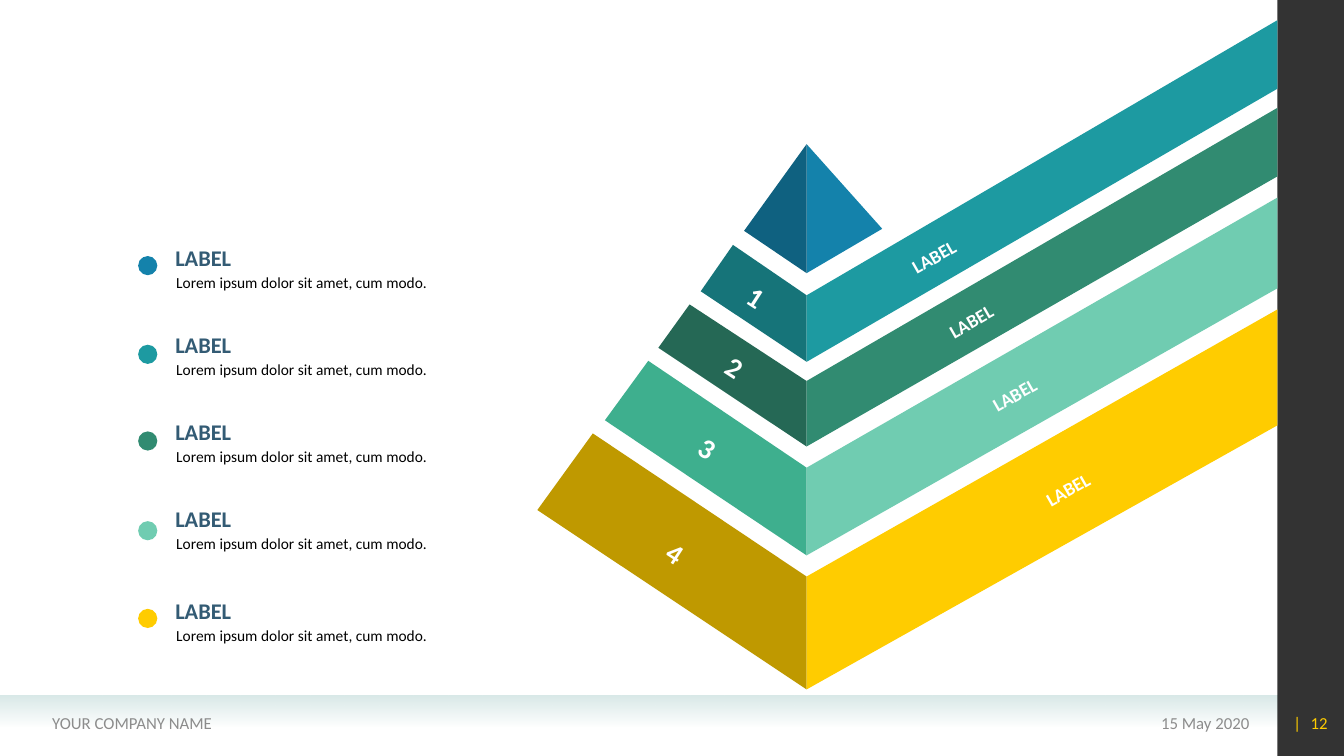
from lxml.etree import SubElement
from pptx import Presentation
from pptx.dml.color import RGBColor
from pptx.enum.shapes import MSO_SHAPE as SHAPE
from pptx.enum.text import MSO_ANCHOR as ANCHOR, PP_ALIGN as ALIGN
from pptx.oxml.ns import qn
from pptx.util import Pt

PX = 9144
FONT = "Calibri"
WHITE = RGBColor(0xFF, 0xFF, 0xFF)
BLACK = RGBColor(0x00, 0x00, 0x00)
GREY = RGBColor(0x8C, 0x8C, 0x8C)
MIST = RGBColor(0xD9, 0xE9, 0xE8)
NAVY = RGBColor(0x33, 0x5B, 0x74)
BLUE = RGBColor(0x14, 0x82, 0xAB)
DARK_BLUE = RGBColor(0x0F, 0x61, 0x80)
TEAL = RGBColor(0x1D, 0x9A, 0xA1)
DARK_TEAL = RGBColor(0x16, 0x74, 0x79)
GREEN = RGBColor(0x31, 0x8B, 0x71)
DARK_GREEN = RGBColor(0x25, 0x68, 0x55)
MINT = RGBColor(0x70, 0xCC, 0xB1)
DARK_MINT = RGBColor(0x3E, 0xAF, 0x8E)
YELLOW = RGBColor(0xFF, 0xCC, 0x00)
DARK_YELLOW = RGBColor(0xBF, 0x99, 0x00)

RIDGE, EDGE = 267, 734
TIERS = [
    ((194, 223), (162, 269), (273, 339), (0, 68), (217, 274), (398, 231), DARK_TEAL, TEAL),
    ((151, 282), (120, 325), (358, 423), (87, 155), (196, 343), (435, 295), DARK_GREEN, GREEN),
    ((110, 338), (67, 397), (444, 531), (176, 266), (169, 424), (478, 368), DARK_MINT, MINT),
    ((55, 410), (0, 486), (552, 664), (287, 402), (137, 528), (531, 462), DARK_YELLOW, YELLOW),
]
LEGEND = [(0, 17, BLUE), (86, 105, TEAL), (173, 191, GREEN), (259, 280, MINT), (350, 367, YELLOW)]


def set_alpha(color_parent, percent):
    """Make the colour inside a fill or gradient stop partly transparent."""
    color = next(color_parent.iter(qn("a:srgbClr")))
    SubElement(color, qn("a:alpha")).set("val", str(percent * 1000))


def add_plain(slide, kind, x, y, w, h, color):
    """Add a preset shape with a solid fill, no line and no shadow."""
    sp = slide.shapes.add_shape(kind, x * PX, y * PX, w * PX, h * PX)
    sp.shadow.inherit = False
    sp.line.fill.background()
    sp.fill.solid()
    sp.fill.fore_color.rgb = color
    return sp


def add_face(slide, x, y, points, color):
    """Add one flat face from points relative to x, y."""
    (x0, y0), *rest = [(x + px, y + py) for px, py in points]
    builder = slide.shapes.build_freeform(x0, y0, scale=PX)
    builder.add_line_segments(rest, close=True)
    sp = builder.convert_to_shape()
    sp.shadow.inherit = False
    sp.line.fill.background()
    sp.fill.solid()
    sp.fill.fore_color.rgb = color


def add_text(slide, x, y, w, h, text, size, color, bold=False,
             align=ALIGN.LEFT, anchor=ANCHOR.MIDDLE, rotation=0):
    """Add a one-line text box and return its paragraph."""
    box = slide.shapes.add_textbox(x * PX, y * PX, w * PX, h * PX)
    box.rotation = rotation
    tf = box.text_frame
    tf.word_wrap = True
    tf.vertical_anchor = anchor
    p = tf.paragraphs[0]
    p.text = text
    p.alignment = align
    font = p.runs[0].font
    font.name, font.size, font.bold = FONT, Pt(size), bold
    font.color.rgb = color
    return p


def add_frame(slide, w, h):
    """Add the footer band, the dark side bar and the footer texts."""
    bar = w - 67
    band = add_plain(slide, SHAPE.RECTANGLE, 0, h - 60, bar, 31, MIST)
    band.fill.gradient()
    band.fill.gradient_angle = 270
    first, last = band.fill.gradient_stops
    for stop, position in ((first, 0), (last, 1)):
        stop.color.rgb = MIST
        stop.position = position
    stops = list(band.fill._xPr.iter(qn("a:gs")))
    set_alpha(stops[-1], 0)
    side = add_plain(slide, SHAPE.RECTANGLE, bar, 0, w - bar, h, BLACK)
    set_alpha(side.fill._xPr, 80)

    top = h - 53
    add_text(slide, 42, top, 490, 40, "YOUR COMPANY NAME", 12, GREY)
    add_text(slide, bar - 357, top, 339, 40, "15 May 2020", 12, GREY, align=ALIGN.RIGHT)
    p = add_text(slide, bar + 6, top, 60, 40, "|\t12", 12, YELLOW)
    tabs = SubElement(p._p.get_or_add_pPr(), qn("a:tabLst"))
    tab = SubElement(tabs, qn("a:tab"))
    tab.set("pos", str(17 * PX))
    tab.set("algn", "l")


def add_pyramid(slide, x, y):
    """Add the numbered tiers and the tip of the pyramid from the corner x, y."""
    for top, bottom, ridge, edge, number_at, label_at, dark, light in TIERS:
        upper, lower = ((RIDGE, ry) for ry in ridge)
        add_face(slide, x, y, [top, bottom, lower, upper], dark)
        add_face(slide, x, y, [upper, lower, (EDGE, edge[1]), (EDGE, edge[0])], light)
    tip, base = (RIDGE, 123), (RIDGE, 251)
    add_face(slide, x, y, [tip, base, (342, 207)], BLUE)
    add_face(slide, x, y, [tip, (205, 209), base], DARK_BLUE)

    for number, tier in enumerate(TIERS, 1):
        (nx, ny), (lx, ly) = tier[4:6]
        add_text(slide, x + nx - 21, y + ny - 25, 42, 51, str(number), 20.2, WHITE,
                 bold=True, align=ALIGN.CENTER, rotation=32.8)
        add_text(slide, x + lx - 39, y + ly - 16, 78, 33, "LABEL", 13.4, WHITE,
                 bold=True, rotation=330.1)


def add_legend(slide, x, y):
    """Add the dotted list of labels and descriptions from the corner x, y."""
    for top, dot_top, color in LEGEND:
        add_plain(slide, SHAPE.OVAL, x, y + dot_top, 19, 19, color)
        add_text(slide, x + 27, y + top, 88, 37, "LABEL", 16, NAVY, bold=True)
        p = add_text(slide, x + 28, y + top + 27, 344, 29,
                     "Lorem ipsum dolor sit amet, cum modo.", 11, BLACK, anchor=ANCHOR.TOP)
        p.line_spacing = Pt(14.7)
        p.space_before = Pt(2)


def main():
    """Build the slide and save it."""
    prs = Presentation()
    prs.slide_width, prs.slide_height = 1333 * PX, 750 * PX
    slide = prs.slides.add_slide(prs.slide_layouts[6])
    add_frame(slide, 1334, 750)
    add_pyramid(slide, 533, 20)
    add_legend(slide, 137, 237)
    prs.save("out.pptx")


if __name__ == "__main__":
    main()
